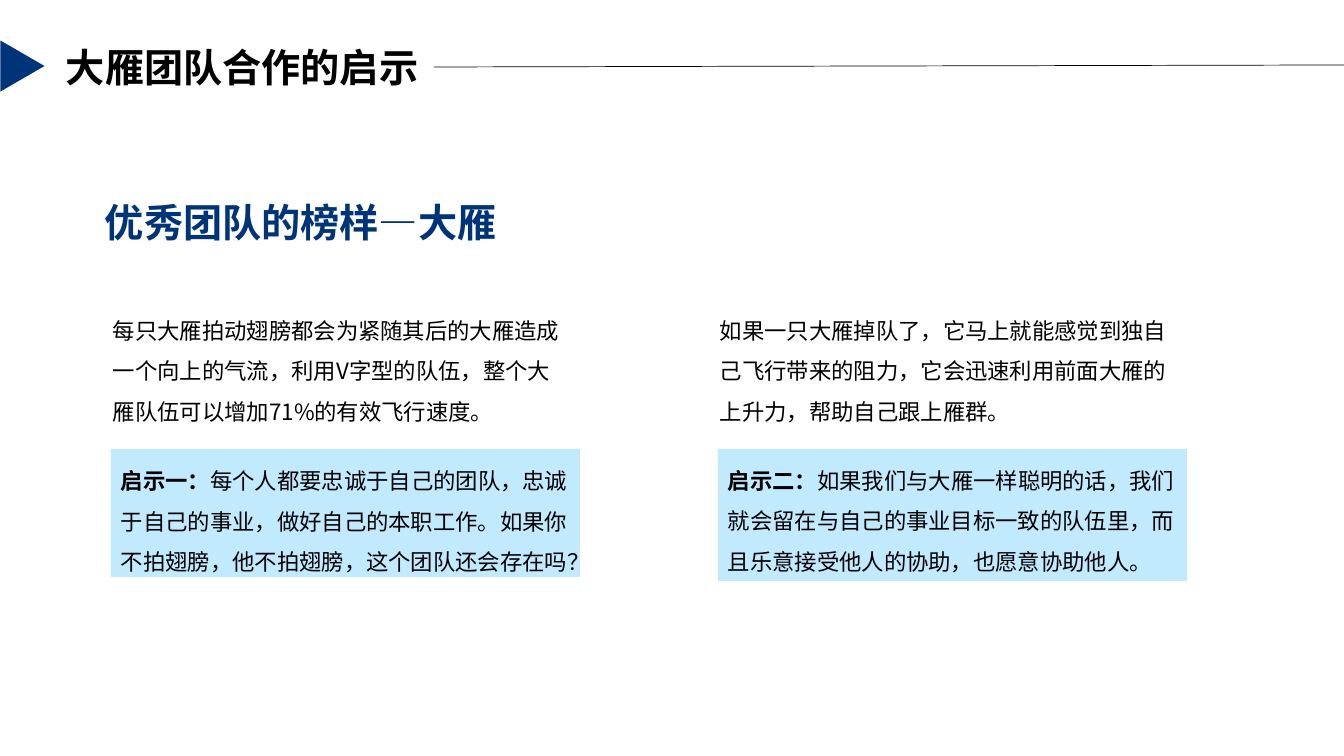
from lxml.etree import SubElement
from pptx import Presentation
from pptx.dml.color import RGBColor
from pptx.enum.shapes import MSO_CONNECTOR, MSO_SHAPE
from pptx.enum.text import MSO_ANCHOR, PP_ALIGN
from pptx.oxml.ns import qn
from pptx.util import Pt

EMU_PER_PX = 914400 / 100.8
BLACK = RGBColor(0, 0, 0)
NAVY = RGBColor(0x00, 0x34, 0x79)
SKY = RGBColor(0xC2, 0xEA, 0xFF)
TITLE_FONT = "Noto Sans CJK JP"
BODY_FONT = "Noto Sans CJK SC"

LESSONS = [
    ("每只大雁拍动翅膀都会为紧随其后的大雁造成一个向上的气流，利用V字型的队伍，整个大雁队伍可以增加71%的有效飞行速度。",
     "启示一：",
     "每个人都要忠诚于自己的团队，忠诚于自己的事业，做好自己的本职工作。如果你不拍翅膀，他不拍翅膀，这个团队还会存在吗？",
     128),
    ("如果一只大雁掉队了，它马上就能感觉到独自己飞行带来的阻力，它会迅速利用前面大雁的上升力，帮助自己跟上雁群。",
     "启示二：",
     "如果我们与大雁一样聪明的话，我们就会留在与自己的事业目标一致的队伍里，而且乐意接受他人的协助，也愿意协助他人。",
     132),
]


def px(*lengths):
    return [round(length * EMU_PER_PX) for length in lengths]


def write(shape, runs, size, color=BLACK, font=BODY_FONT, spacing=None,
          anchor=MSO_ANCHOR.TOP, align=PP_ALIGN.LEFT):
    frame = shape.text_frame
    frame.word_wrap = True
    frame.vertical_anchor = anchor
    paragraph = frame.paragraphs[0]
    paragraph.alignment = align
    paragraph.line_spacing = spacing
    for text, bold in runs:
        run = paragraph.add_run()
        run.text = text
        run.font.size = Pt(size)
        run.font.bold = bold
        run.font.name = font
        run.font.color.rgb = color
        SubElement(run.font._element, qn("a:ea")).set("typeface", font)


def add_filled(slide, kind, box, color):
    shape = slide.shapes.add_shape(kind, *px(*box))
    shape.shadow.inherit = False
    shape.fill.solid()
    shape.fill.fore_color.rgb = color
    shape.line.fill.background()
    return shape


def add_header(slide, left, top, width, height):
    title = slide.shapes.add_textbox(*px(left + 56, top, 378, height))
    write(title, [("大雁团队合作的启示", True)], 28, font=TITLE_FONT,
          align=PP_ALIGN.JUSTIFY)
    marker = add_filled(slide, MSO_SHAPE.ISOSCELES_TRIANGLE,
                        (left - 3, top + 6, 51, 44), NAVY)
    marker.rotation = 90
    rule = slide.shapes.add_connector(
        MSO_CONNECTOR.STRAIGHT,
        *px(left + 434, top + 29, left + width, top + 27))
    rule.line.color.rgb = BLACK
    rule.line.width = Pt(0.5)
    SubElement(rule._element.spPr, qn("a:effectLst"))


def add_heading(slide, left, top, width, height):
    heading = slide.shapes.add_textbox(*px(left, top, width, height))
    write(heading, [("优秀团队的榜样—大雁", True)], 28, NAVY, spacing=0.9,
          anchor=MSO_ANCHOR.MIDDLE)


def add_lesson(slide, left, top, width, fact, label, lesson, panel_height):
    fact_box = slide.shapes.add_textbox(*px(left, top, width, 132))
    write(fact_box, [(fact, False)], 16, spacing=1.5)
    panel = add_filled(slide, MSO_SHAPE.RECTANGLE,
                       (left + 8, top + 150, width - 7, panel_height), SKY)
    write(panel, [(label, True), (lesson, False)], 16, spacing=1.5)


def main():
    presentation = Presentation()
    presentation.slide_width, presentation.slide_height = px(1344, 756)
    slide = presentation.slides.add_slide(presentation.slide_layouts[6])
    add_header(slide, 0, 38, 1344, 57)
    for column, lesson in enumerate(LESSONS):
        add_lesson(slide, 103 + column * 607, 299, 476, *lesson)
    add_heading(slide, 95, 158, 857, 133)
    presentation.save("out.pptx")


if __name__ == "__main__":
    main()
